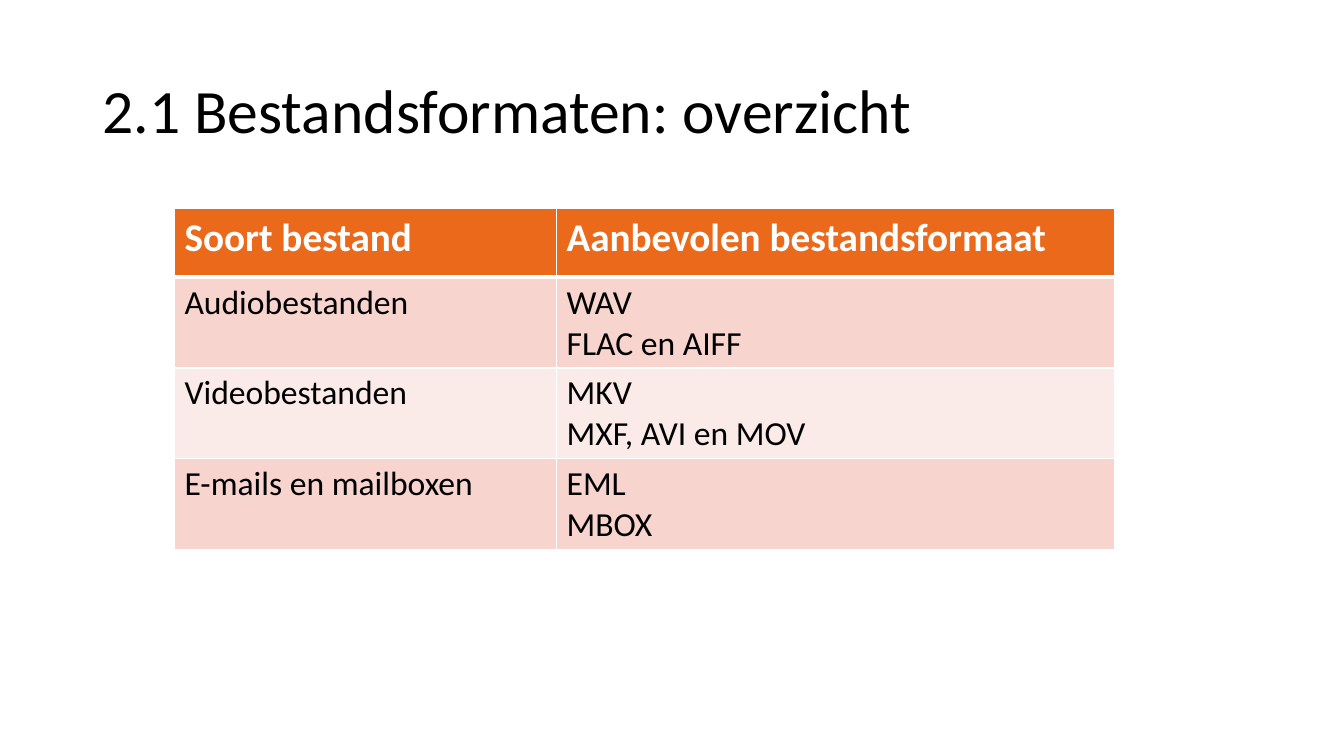
"""Builds a slide with an overview table of recommended file formats."""
import pptx
import pptx.dml.color
import pptx.enum.text
import pptx.oxml
import pptx.oxml.ns
import pptx.util

Inches, Pt = pptx.util.Inches, pptx.util.Pt
RGBColor = pptx.dml.color.RGBColor

BLACK = RGBColor(0x00, 0x00, 0x00)
WHITE = RGBColor(0xFF, 0xFF, 0xFF)
ORANGE = RGBColor(0xEB, 0x69, 0x1B)
BANDS = (RGBColor(0xF7, 0xD4, 0xCD), RGBColor(0xFB, 0xEB, 0xE8))
FONT = "Calibri"

COL_WIDTHS = (3.79, 5.54)
HEADER_HEIGHT, ROW_HEIGHT = 0.68, 0.89
FORMATS = (
    ("Soort bestand", "Aanbevolen bestandsformaat"),
    ("Audiobestanden", "WAV\nFLAC en AIFF"),
    ("Videobestanden", "MKV\nMXF, AVI en MOV"),
    ("E-mails en mailboxen", "EML\nMBOX"),
)


def write_text(tf, text, size=24, color=BLACK, bold=False, spacing=1.0):
    """Write each line of text as a formatted paragraph."""
    for i, line in enumerate(text.split("\n")):
        p = tf.add_paragraph() if i else tf.paragraphs[0]
        p.line_spacing = spacing
        r = p.add_run()
        r.text = line
        r.font.name, r.font.size, r.font.bold = FONT, Pt(size), bold
        r.font.color.rgb = color


def set_borders(cell, top=1, bottom=1):
    """Give a cell white borders with the given widths in points."""
    tc_pr = cell._tc.get_or_add_tcPr()
    for side, width in (("L", 1), ("R", 1), ("T", top), ("B", bottom)):
        tc_pr.append(pptx.oxml.parse_xml(
            f'<a:ln{side} {pptx.oxml.ns.nsdecls("a")} w="{Pt(width)}">'
            f'<a:solidFill><a:srgbClr val="{WHITE}"/></a:solidFill></a:ln{side}>'))


def add_title(slide, left, top, width, height, text):
    """Place the title, vertically centred in its box."""
    sp = slide.shapes.add_textbox(*map(Inches, (left, top, width, height)))
    tf = sp.text_frame
    tf.word_wrap = True
    tf.vertical_anchor = pptx.enum.text.MSO_ANCHOR.MIDDLE
    write_text(tf, text, size=44, spacing=0.9)


def add_format_table(slide, left, top, rows):
    """Place the format table with a header row and banded body rows."""
    height = HEADER_HEIGHT + ROW_HEIGHT * (len(rows) - 1)
    box = map(Inches, (left, top, sum(COL_WIDTHS), height))
    table = slide.shapes.add_table(len(rows), len(COL_WIDTHS), *box).table
    for col, width in zip(table.columns, COL_WIDTHS):
        col.width = Inches(width)
    for i, texts in enumerate(rows):
        header = i == 0
        table.rows[i].height = Inches(HEADER_HEIGHT if header else ROW_HEIGHT)
        for j, text in enumerate(texts):
            cell = table.cell(i, j)
            set_borders(cell, top=3 if i == 1 else 1, bottom=3 if header else 1)
            cell.fill.solid()
            cell.fill.fore_color.rgb = ORANGE if header else BANDS[(i - 1) % 2]
            style = dict(size=28, color=WHITE, bold=True) if header else {}
            write_text(cell.text_frame, text, **style)


def main():
    """Build the slide and save it."""
    prs = pptx.Presentation()
    prs.slide_width, prs.slide_height = Inches(13.33), Inches(7.5)
    slide = prs.slides.add_slide(prs.slide_layouts[6])
    add_title(slide, 0.92, 0.4, 11.97, 1.45, "2.1 Bestandsformaten: overzicht")
    add_format_table(slide, 1.73, 2.07, FORMATS)
    prs.save("out.pptx")


if __name__ == "__main__":
    main()
